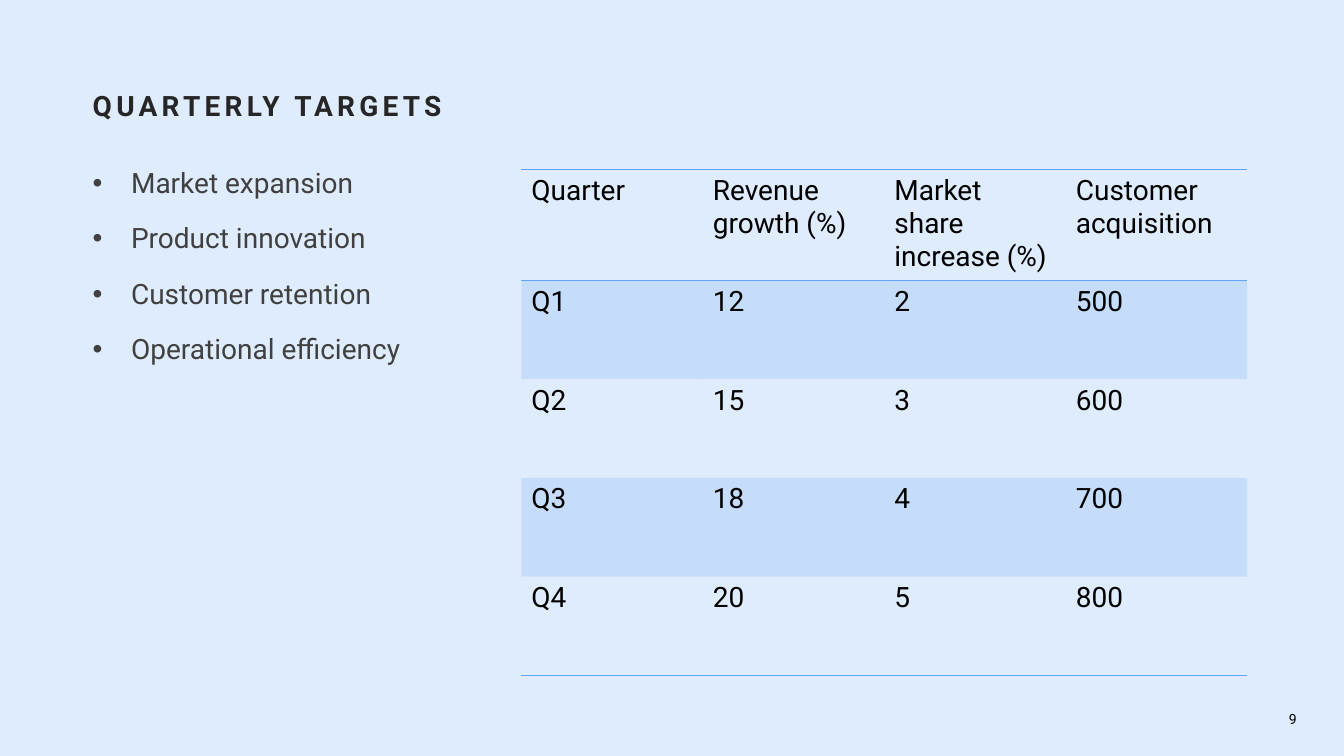
from lxml import etree
from pptx import Presentation, util as u
from pptx.dml.color import RGBColor
from pptx.enum import text
from pptx.oxml.ns import qn

TITLE = "QUARTERLY TARGETS"
GOALS = ["Market expansion", "Product innovation", "Customer retention",
         "Operational efficiency"]
TARGETS = [
    ("Quarter", "Revenue growth (%)", "Market share increase (%)",
     "Customer acquisition"),
    ("Q1", "12", "2", "500"),
    ("Q2", "15", "3", "600"),
    ("Q3", "18", "4", "700"),
    ("Q4", "20", "5", "800"),
]
PAGE = "9"

WIDTH, HEIGHT = 13.33, 7.5
MARGIN, CONTENT_TOP = 0.92, 1.68
COL_W, ROW_H = 1.8, 0.98
TABLE_W, TABLE_H = COL_W * len(TARGETS[0]), ROW_H * len(TARGETS)
TABLE_LEFT = 5.17
BACKGROUND, ACCENT = "DFECFD", "60A2F5"
NO_STYLE = "{2D5ABB26-0587-4C30-8999-92F81FD0307C}"


def rgb(value):
    return RGBColor.from_string(value)


def write(p, content, size=20, color="000000", bold=False, spacing=0):
    r = p.add_run()
    r.text = content
    r.font.name, r.font.size, r.font.bold = "Roboto", u.Pt(size), bold
    r.font.color.rgb = rgb(color)
    if spacing:
        r.font._element.set("spc", str(spacing * 100))


def add_box(s, left, top, width, height, anchor=text.MSO_ANCHOR.TOP):
    """Add a wrapping text box without insets and return its text frame."""
    tf = s.shapes.add_textbox(*map(u.Inches, (left, top, width, height))).text_frame
    tf.word_wrap, tf.vertical_anchor = True, anchor
    tf.margin_left = tf.margin_right = tf.margin_top = tf.margin_bottom = 0
    return tf


def add_bullet(p, indent=0.38):
    pPr = p._p.get_or_add_pPr()
    pPr.set("marL", str(u.Inches(indent)))
    pPr.set("indent", str(-u.Inches(indent)))
    etree.SubElement(pPr, qn("a:buFont")).set("typeface", "Arial")
    etree.SubElement(pPr, qn("a:buChar")).set("char", "•")


def add_border(cell, side):
    ln = etree.SubElement(cell._tc.get_or_add_tcPr(), qn("a:ln" + side))
    ln.set("w", str(u.Pt(1)))
    fill = etree.SubElement(ln, qn("a:solidFill"))
    etree.SubElement(fill, qn("a:srgbClr")).set("val", ACCENT)


def fill_cell(cell, banded):
    if not banded:
        cell.fill.background()
        return
    cell.fill.solid()
    cell.fill.fore_color.rgb = rgb(ACCENT)
    clr = cell._tc.tcPr.find(qn("a:solidFill")).find(qn("a:srgbClr"))
    etree.SubElement(clr, qn("a:alpha")).set("val", "20000")


def add_targets(s):
    frame = s.shapes.add_table(
        len(TARGETS), len(TARGETS[0]),
        *map(u.Inches, (TABLE_LEFT, CONTENT_TOP, TABLE_W, TABLE_H)))
    table = frame.table
    table.first_row = table.horz_banding = False
    table._tbl.tblPr.find(qn("a:tableStyleId")).text = NO_STYLE
    borders = {0: "TB", len(TARGETS) - 1: "B"}
    for i, row in enumerate(TARGETS):
        for j, content in enumerate(row):
            cell = table.cell(i, j)
            write(cell.text_frame.paragraphs[0], content)
            for side in borders.get(i, ""):
                add_border(cell, side)
            fill_cell(cell, banded=i % 2 == 1)


def main():
    prs = Presentation()
    prs.slide_width, prs.slide_height = u.Inches(WIDTH), u.Inches(HEIGHT)
    s = prs.slides.add_slide(prs.slide_layouts[6])
    s.background.fill.solid()
    s.background.fill.fore_color.rgb = rgb(BACKGROUND)

    p = add_box(s, MARGIN, MARGIN, 11.46, 0.61).paragraphs[0]
    p.line_spacing = 0.9
    write(p, TITLE, color="262626", bold=True, spacing=3)

    tf = add_box(s, MARGIN, CONTENT_TOP, 3.13, TABLE_H)
    for i, goal in enumerate(GOALS):
        p = tf.add_paragraph() if i else tf.paragraphs[0]
        add_bullet(p)
        p.line_spacing, p.space_after = 0.9, u.Pt(18)
        write(p, goal, color="404040")

    add_targets(s)

    p = add_box(s, 11.94, 6.98, 0.92, 0.31, text.MSO_ANCHOR.MIDDLE).paragraphs[0]
    p.alignment = text.PP_ALIGN.RIGHT
    write(p, PAGE, size=10)

    prs.save("out.pptx")


if __name__ == "__main__":
    main()
